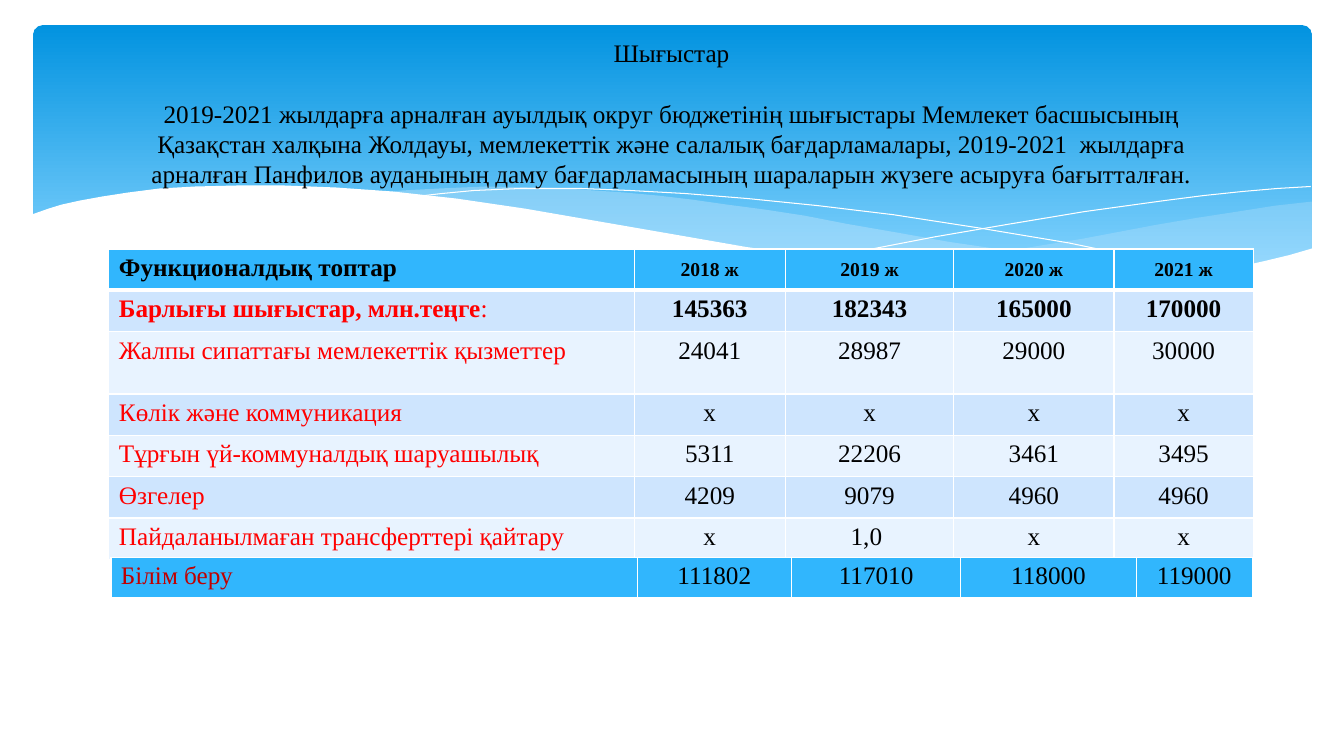
from lxml import etree
from pptx import Presentation
from pptx import util as u
from pptx.dml.color import RGBColor
from pptx.enum import shapes, text
from pptx.oxml.ns import qn

PX = 9144
WHITE = RGBColor(0xFF, 0xFF, 0xFF)
BLACK = RGBColor(0, 0, 0)
RED = RGBColor(0xFF, 0, 0)
DARK_RED = RGBColor(0xC0, 0, 0)
SKY_TOP = RGBColor(0x02, 0x93, 0xE0)
SKY_BOTTOM = RGBColor(0x83, 0xD3, 0xFE)
WAVE = RGBColor(0xC6, 0xE7, 0xFC)
HEADER = RGBColor(0x31, 0xB6, 0xFD)
BAND_DARK = RGBColor(0xCE, 0xE5, 0xFE)
BAND_LIGHT = RGBColor(0xE8, 0xF3, 0xFF)

RIGHT_WAVE = [
    (1301, 200), (1265, 204), (1227, 210), (1188, 216), (1147, 223), (1073, 237),
    (1005, 248), (941, 257), (882, 265), (921, 269), (958, 272), (993, 275),
    (1025, 277), (1071, 278), (1113, 277), (1151, 275), (1186, 272), (1218, 267),
    (1247, 262), (1266, 257), (1284, 252), (1301, 247)]
MIDDLE_WAVE = [
    (1190, 273), (1154, 269), (1116, 265), (1076, 260), (1034, 254), (989, 247),
    (941, 240), (891, 231), (839, 222), (798, 214), (759, 208), (721, 203),
    (686, 198), (652, 194), (619, 191), (589, 189), (560, 187), (532, 186),
    (482, 185), (437, 187), (399, 189), (382, 191), (431, 196), (483, 203),
    (539, 211), (599, 222), (654, 232), (706, 240), (755, 248), (802, 255),
    (846, 261), (887, 266), (926, 270), (963, 274), (998, 276), (1030, 277),
    (1076, 278), (1118, 278), (1156, 276)]
FALLING_LINE = [
    (412, 195), (438, 192), (470, 189), (516, 187), (577, 187), (625, 189),
    (680, 192), (742, 197), (811, 204), (886, 213), (970, 226), (1060, 241),
    (1108, 251), (1158, 261), (1210, 272)]
RISING_LINE = [
    (818, 257), (870, 246), (927, 235), (997, 223), (1075, 210), (1155, 199),
    (1194, 194), (1232, 190), (1267, 187), (1300, 185)]
WHITE_WAVE = [
    (1303, 246), (1279, 253), (1254, 259), (1227, 265), (1198, 269), (1167, 273),
    (1134, 275), (1097, 277), (1058, 276), (1015, 275), (969, 272), (918, 268),
    (863, 262), (804, 254), (740, 245), (671, 233), (596, 220), (521, 207),
    (453, 197), (390, 190), (333, 186), (282, 184), (235, 184), (194, 185),
    (158, 187), (127, 191), (101, 195), (79, 199), (61, 203), (48, 207),
    (31, 213), (31, 329), (1303, 329)]

HEADING = "Шығыстар"
SUBTITLE = (
    "2019-2021 жылдарға арналған ауылдық округ бюджетінің шығыстары Мемлекет басшысының "
    "Қазақстан халқына Жолдауы, мемлекеттік және салалық бағдарламалары, 2019-2021  жылдарға "
    "арналған Панфилов ауданының даму бағдарламасының шараларын жүзеге асыруға бағытталған.")
EXPENSES = [
    ["Функционалдық топтар", "2018 ж", "2019 ж", "2020 ж", "2021 ж"],
    ["Барлығы шығыстар, млн.теңге", "145363", "182343", "165000", "170000"],
    ["Жалпы сипаттағы мемлекеттік қызметтер", "24041", "28987", "29000", "30000"],
    ["Көлік және коммуникация", "х", "х", "х", "х"],
    ["Тұрғын үй-коммуналдық шаруашылық", "5311", "22206", "3461", "3495"],
    ["Өзгелер", "4209", "9079", "4960", "4960"],
    ["Пайдаланылмаған трансферттері қайтару", "х", "1,0 ", "х", "х"]]
EDUCATION = ["Білім беру", "111802", "117010", "118000", "119000"]


def add_run(p, content, size=18, color=BLACK, bold=False, font="Times New Roman"):
    r = p.add_run()
    r.text = content
    r.font.name = font
    r.font.size = u.Pt(size)
    r.font.bold = bold
    r.font.color.rgb = color


class Slide:
    def __init__(self, prs):
        self.shapes = prs.slides.add_slide(prs.slide_layouts[6]).shapes

    def banner(self, x, y, w, h):
        sp = self.shapes.add_shape(
            shapes.MSO_SHAPE.ROUNDED_RECTANGLE, x * PX, y * PX, w * PX, h * PX)
        sp.adjustments[0] = 0.034
        sp.shadow.inherit = False
        sp.line.fill.background()
        sp.fill.gradient()
        sp.fill.gradient_angle = 270
        for stop, color, position in zip(
                sp.fill.gradient_stops, (SKY_TOP, SKY_BOTTOM), (0, 0.9)):
            stop.color.rgb = color
            stop.position = position

    def outline(self, points, closed):
        builder = self.shapes.build_freeform(*points[0], scale=PX)
        builder.add_line_segments(points[1:], close=closed)
        sp = builder.convert_to_shape()
        sp.shadow.inherit = False
        return sp

    def wave(self, points, color, opacity=100):
        sp = self.outline(points, True)
        sp.line.fill.background()
        sp.fill.solid()
        sp.fill.fore_color.rgb = color
        if opacity < 100:
            clr = sp._element.spPr.find(qn("a:solidFill"))[0]
            etree.SubElement(clr, qn("a:alpha"), val=str(opacity * 1000))

    def curve(self, points):
        sp = self.outline(points, False)
        sp.fill.background()
        sp.line.color.rgb = WHITE
        sp.line.width = 0

    def title(self, x, y, w, h, heading, subtitle):
        tf = self.shapes.add_textbox(x * PX, y * PX, w * PX, h * PX).text_frame
        tf.word_wrap = True
        tf.margin_top = tf.margin_bottom = 0
        for i, content in enumerate((heading, subtitle)):
            p = tf.add_paragraph() if i else tf.paragraphs[0]
            p.alignment = text.PP_ALIGN.CENTER
            p.space_before = u.Pt(22 * i)
            add_run(p, content)

    def table(self, x, y, widths, heights):
        frame = self.shapes.add_table(
            len(heights), len(widths), x * PX, y * PX, sum(widths) * PX, sum(heights) * PX)
        table = frame.table
        table.first_row = table.horz_banding = False
        for column, w in zip(table.columns, widths):
            column.width = w * PX
        for row, h in zip(table.rows, heights):
            row.height = h * PX
        return table

    def cell(self, cell, content, fill, centered=False, bottom=1, **style):
        tcPr = cell._tc.get_or_add_tcPr()
        for side, width in zip("LRTB", (1, 1, 1, bottom)):
            ln = etree.SubElement(tcPr, qn("a:ln" + side), w=str(u.Pt(width)))
            solid = etree.SubElement(ln, qn("a:solidFill"))
            etree.SubElement(solid, qn("a:srgbClr"), val=str(WHITE))
        cell.fill.solid()
        cell.fill.fore_color.rgb = fill
        p = cell.text_frame.paragraphs[0]
        if centered:
            p.alignment = text.PP_ALIGN.CENTER
        add_run(p, content, **style)


def main():
    prs = Presentation()
    prs.slide_width, prs.slide_height = 1333 * PX, 750 * PX
    s = Slide(prs)
    s.banner(33, 25, 1268, 270)
    s.wave(RIGHT_WAVE, WAVE, 29)
    s.wave(MIDDLE_WAVE, WAVE, 40)
    s.curve(FALLING_LINE)
    s.curve(RISING_LINE)
    s.wave(WHITE_WAVE, WHITE)

    expenses = s.table(108, 247, [521, 150, 167, 159, 138], [41, 41, 62, 41, 41, 41, 41])
    for i, row in enumerate(EXPENSES):
        fill = HEADER if i == 0 else (BAND_LIGHT, BAND_DARK)[i % 2]
        for j, content in enumerate(row):
            cell = expenses.cell(i, j)
            year = i == 0 and j > 0
            s.cell(cell, content, fill, centered=j > 0, bottom=1 if i else 3,
                   size=14 if year else 18, bold=i < 2, color=RED if i and not j else BLACK)
            if year:
                cell.vertical_anchor = text.MSO_ANCHOR.MIDDLE
                cell.margin_left = cell.margin_right = 7 * PX
                cell.margin_top = cell.margin_bottom = 0
    add_run(expenses.cell(1, 0).text_frame.paragraphs[0], ":", color=RED)

    s.title(100, 37, 1132, 173, HEADING, SUBTITLE)

    education = s.table(110, 553, [522, 153, 168, 174, 115], [41])
    for j, content in enumerate(EDUCATION):
        s.cell(education.cell(0, j), content, HEADER, centered=j > 0, bottom=3,
               color=BLACK if j else DARK_RED)
    prs.save("out.pptx")


if __name__ == "__main__":
    main()
